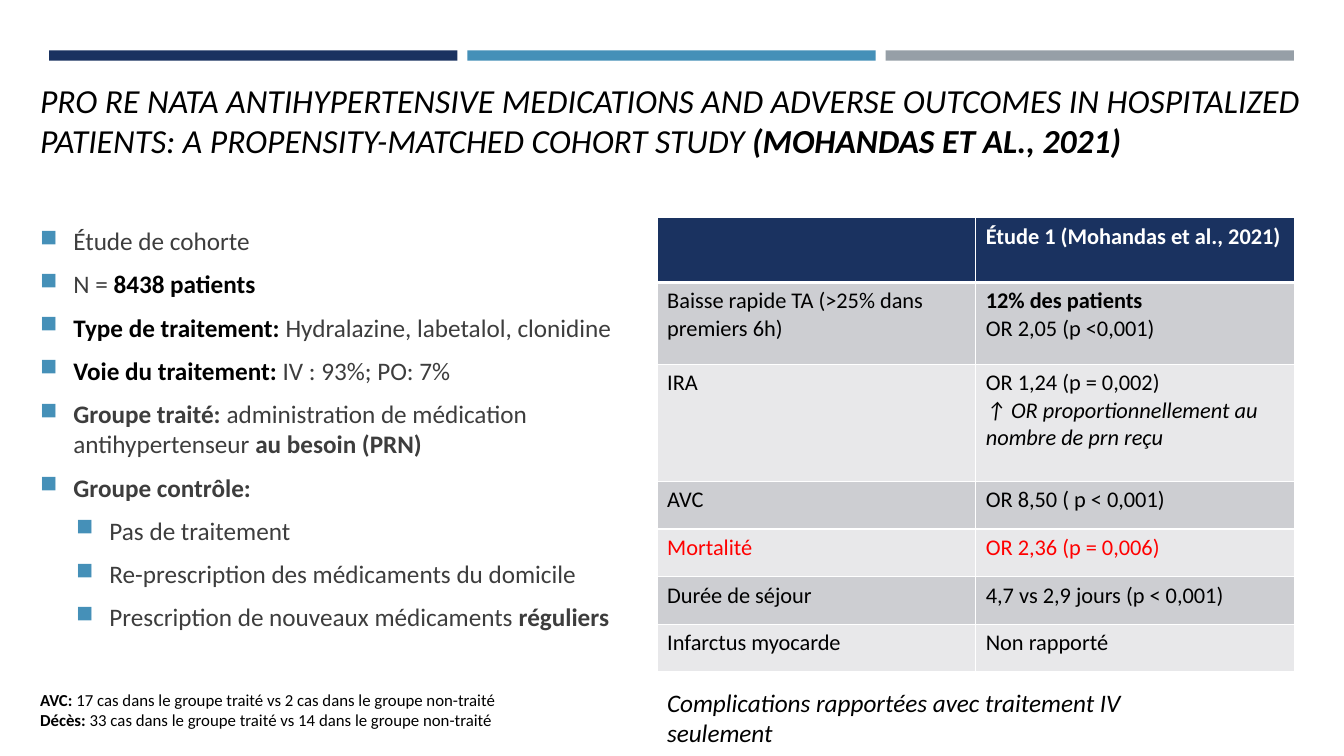
import pptx
import pptx.util
import pptx.dml.color
import pptx.enum.shapes
import pptx.enum.text
import pptx.oxml.ns
import lxml.etree
from pptx.util import Cm, Pt

FONT = "Calibri"
COLOURS = {
    "navy": "1A3260",
    "blue": "4590B8",
    "grey": "969FA7",
    "body": "3D3D3D",
    "black": "000000",
    "white": "FFFFFF",
    "red": "FF0000",
    "band_dark": "CDCED2",
    "band_light": "E8E8EA",
}

TITLE = [[
    ("PRO RE NATA ANTIHYPERTENSIVE MEDICATIONS AND ADVERSE OUTCOMES IN HOSPITALIZED "
     "PATIENTS: A PROPENSITY-MATCHED COHORT STUDY ", "black", "i"),
    ("(MOHANDAS ET AL., 2021)", "black", "bi"),
]]
STUDY_POINTS = [
    (0, [("Étude de cohorte", "body", "")]),
    (0, [("N = ", "body", ""), ("8438 patients", "black", "b")]),
    (0, [("Type de traitement: ", "black", "b"),
         ("Hydralazine, labetalol, clonidine", "body", "")]),
    (0, [("Voie du traitement: ", "black", "b"), ("IV : 93%; PO: 7%", "body", "")]),
    (0, [("Groupe traité: ", "body", "b"),
         ("administration de médication antihypertenseur ", "body", ""),
         ("au besoin (PRN)", "body", "b")]),
    (0, [("Groupe contrôle:", "body", "b")]),
    (1, [("Pas de traitement", "body", "")]),
    (1, [("Re-prescription des médicaments du domicile", "body", "")]),
    (1, [("Prescription de nouveaux médicaments ", "body", ""), ("réguliers", "body", "b")]),
]
OUTCOMES = [
    (1.63, "white", [], [("Étude 1 (Mohandas et al., 2021)", "b")]),
    (2.06, "black", [("Baisse rapide TA (>25% dans premiers 6h)", "")],
     [("12% des patients", "b"), ("OR 2,05 (p <0,001)", "")]),
    (2.95, "black", [("IRA", "")],
     [("OR 1,24 (p = 0,002)", ""),
      ("↑ OR proportionnellement au nombre de prn reçu", "i")]),
    (1.2, "black", [("AVC", "")], [("OR 8,50 ( p < 0,001)", "")]),
    (1.2, "red", [("Mortalité", "")], [("OR 2,36 (p = 0,006)", "")]),
    (1.2, "black", [("Durée de séjour", "")], [("4,7 vs 2,9 jours (p < 0,001)", "")]),
    (1.2, "black", [("Infarctus myocarde", "")], [("Non rapporté", "")]),
]
CAPTION = [[("Complications rapportées avec traitement IV seulement", "black", "i")]]
FOOTNOTES = [
    [("AVC: ", "black", "b"),
     ("17 cas dans le groupe traité vs 2 cas dans le groupe non-traité", "black", "")],
    [("Décès: ", "black", "b"),
     ("33 cas dans le groupe traité vs 14 dans le groupe non-traité", "black", "")],
]


def rgb(name):
    return pptx.dml.color.RGBColor.from_string(COLOURS[name])


def add_xml(parent, tag, **attributes):
    return lxml.etree.SubElement(parent, pptx.oxml.ns.qn(tag), attributes)


def add_bar(page, left, colour):
    bar = page.shapes.add_shape(
        pptx.enum.shapes.MSO_SHAPE.RECTANGLE, Cm(left), Cm(1.27), Cm(10.29), Cm(0.26))
    bar.shadow.inherit = False
    bar.fill.solid()
    bar.fill.fore_color.rgb = rgb(colour)
    bar.line.fill.background()


def write_paragraph(para, spans, size):
    para.font.name = FONT
    para.font.size = Pt(size)
    for text, colour, style in spans:
        span = para.add_run()
        span.text = text
        span.font.color.rgb = rgb(colour)
        span.font.bold = "b" in style
        span.font.italic = "i" in style


def write_paragraphs(frame, paragraphs, size):
    for index, spans in enumerate(paragraphs):
        para = frame.add_paragraph() if index else frame.paragraphs[0]
        write_paragraph(para, spans, size)


def add_text(page, left, top, width, height, paragraphs, size, anchor="TOP"):
    box = page.shapes.add_textbox(Cm(left), Cm(top), Cm(width), Cm(height))
    frame = box.text_frame
    frame.word_wrap = True
    frame.vertical_anchor = getattr(pptx.enum.text.MSO_ANCHOR, anchor)
    write_paragraphs(frame, paragraphs, size)
    return frame


def set_bullet(para, level):
    para.level = level
    properties = para._p.get_or_add_pPr()
    properties.set("marL", str(Cm(0.84 + 0.91 * level)))
    properties.set("indent", str(-Cm(0.84)))
    colour = lxml.etree.Element(pptx.oxml.ns.qn("a:buClr"))
    add_xml(colour, "a:srgbClr", val=COLOURS["blue"])
    size = lxml.etree.Element(pptx.oxml.ns.qn("a:buSzPct"), val="92000")
    mark = lxml.etree.Element(pptx.oxml.ns.qn("a:buChar"), char="■")
    for position, element in enumerate((colour, size, mark)):
        properties.insert(position, element)
    para.space_before = Pt(3.3)
    para.space_after = Pt(6)


def add_points(page):
    frame = add_text(page, 0.76, 5.23, 15.19, 11.15,
                     [spans for _, spans in STUDY_POINTS], 18, "MIDDLE")
    for para, (level, _) in zip(frame.paragraphs, STUDY_POINTS):
        set_bullet(para, level)


def set_borders(cell, widths):
    properties = cell._tc.get_or_add_tcPr()
    for position, (side, width) in enumerate(widths.items()):
        line = lxml.etree.Element(pptx.oxml.ns.qn(f"a:ln{side}"), w=str(Pt(width)))
        add_xml(add_xml(line, "a:solidFill"), "a:srgbClr", val=COLOURS["white"])
        properties.insert(position, line)


def add_outcomes(page):
    frame = page.shapes.add_table(
        len(OUTCOMES), 2, Cm(16.56), Cm(5.49), Cm(16.06), Cm(11.44))
    table = frame.table
    table.horz_banding = False
    for column in table.columns:
        column.width = Cm(8.03)
    for row, (height, colour, *contents) in enumerate(OUTCOMES):
        table.rows[row].height = Cm(height)
        fill = "navy" if row == 0 else ("band_light", "band_dark")[row % 2]
        for column, lines in enumerate(contents):
            cell = table.cell(row, column)
            cell.fill.solid()
            cell.fill.fore_color.rgb = rgb(fill)
            set_borders(cell, {"L": 1, "R": 1, "T": 3 if row == 1 else 1,
                               "B": 3 if row == 0 else 1})
            write_paragraphs(cell.text_frame,
                             [[(text, colour, style)] for text, style in lines], 16)


def main():
    deck = pptx.Presentation()
    deck.slide_width, deck.slide_height = Cm(33.87), Cm(19.05)
    page = deck.slides.add_slide(deck.slide_layouts[6])
    for index, colour in enumerate(("navy", "blue", "grey")):
        add_bar(page, 1.24 + 10.54 * index, colour)
    title = add_text(page, 0.76, 1.85, 34.11, 3.35, TITLE, 24, "BOTTOM")
    title.margin_bottom = Cm(1.16)
    add_points(page)
    add_outcomes(page)
    add_text(page, 16.56, 17.2, 13.84, 1.02, CAPTION, 18)
    add_text(page, 0.76, 17.25, 13.16, 1.8, FOOTNOTES, 12)
    deck.save("out.pptx")


if __name__ == "__main__":
    main()
